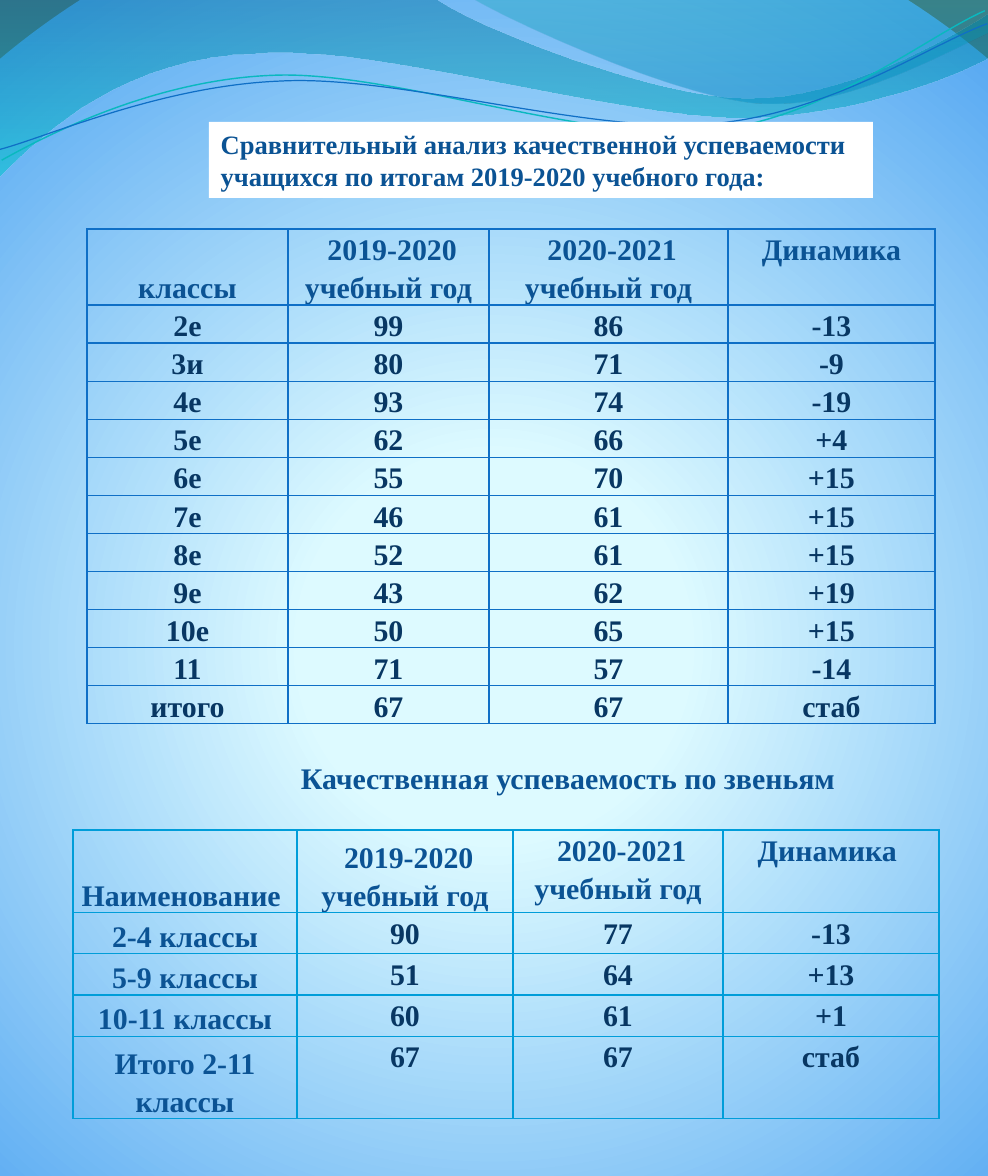
from dataclasses import dataclass

from pptx import Presentation
from pptx.dml.color import RGBColor
from pptx.enum.shapes import MSO_SHAPE
from pptx.enum.text import MSO_ANCHOR, MSO_AUTO_SIZE, PP_ALIGN
from pptx.oxml import parse_xml
from pptx.oxml.ns import nsdecls, qn
from pptx.util import Pt

RECT = MSO_SHAPE.RECTANGLE
TOP, MIDDLE, BOTTOM = MSO_ANCHOR.TOP, MSO_ANCHOR.MIDDLE, MSO_ANCHOR.BOTTOM
LEFT, CENTER = PP_ALIGN.LEFT, PP_ALIGN.CENTER
GROW = MSO_AUTO_SIZE.SHAPE_TO_FIT_TEXT

PX = 7652


@dataclass(frozen=True)
class Theme:
    font: str = "Times New Roman"
    title_size: int = 16
    body_size: int = 18
    blue: str = "0B5394"
    navy: str = "083763"
    white: str = "FFFFFF"
    class_grid: str = "0F6FC6"
    level_grid: str = "009DD9"
    teal_line: str = "0AB8BF"
    blue_line: str = "0F6FC6"
    backdrop: tuple = ((25, "DDFAFF", 100), (100, "59AAF2", 100), (100, "52767C", 100))
    wide_wave: tuple = ((0, "0074A1", 45), (100, "00C6CF", 55))
    right_wave: tuple = ((0, "00A1A9", 30), (80, "008BBF", 45))


THEME = Theme()
DOWN = '<a:lin ang="5400000" scaled="0"/>'
RADIAL = ('<a:path path="circle"><a:fillToRect l="10000" t="110000" '
          'r="10000" b="100000"/></a:path>')
LINE_TILT = -2.7

WIDE_WAVE = [[(0, -1)], [(435, -1)], [(470, 26), (656, 99), (749, 99)],
             [(842, 99), (946, 41), (988, 14)], [(989, 57)],
             [(972, 69), (859, 118), (737, 118)], [(614, 118), (378, 44), (255, 54)],
             [(128, 56), (45, 130), (-1, 177)], [(0, -1)]]
RIGHT_WAVE = [[(473, -1)], [(503, 18), (674, 97), (760, 103)],
              [(845, 109), (950, 50), (988, 33)], [(988, 0)], [(473, -1)]]
TEAL_CURVE = [[(-1, 137)], [(47, 113), (156, 64), (273, 65)],
              [(390, 65), (585, 147), (703, 141)], [(821, 137), (928, 57), (988, 34)]]
BLUE_CURVE = [[(-2, 126)], [(45, 116), (162, 70), (281, 71)],
              [(399, 70), (590, 139), (707, 134)], [(826, 131), (932, 65), (990, 47)]]

YEARS = [" 2019-2020 учебный год", " 2020-2021 учебный год"]
CLASS_ROWS = [
    ["классы", *YEARS, "Динамика"],
    ["2е", "99", "86", "-13"],
    ["3и", "80", "71", "-9"],
    ["4е", "93", "74", "-19"],
    ["5е", "62", "66", "+4"],
    ["6е", "55", "70", "+15"],
    ["7е", "46", "61", "+15"],
    ["8е", "52", "61", "+15"],
    ["9е", "43", "62", "+19"],
    ["10е", "50", "65", "+15"],
    ["11", "71", "57", "-14"],
    ["итого", "67", "67", "стаб"],
]
LEVEL_ROWS = [
    ["Наименование ", *YEARS, "Динамика "],
    ["2-4 классы", "90", "77", "-13"],
    ["5-9 классы", "51", "64", "+13"],
    ["10-11 классы", "60", "61", "+1"],
    ["Итого 2-11 классы", "67", "67", "стаб"],
]
TITLE = ["Сравнительный анализ качественной успеваемости",
         "учащихся по итогам 2019-2020 учебного года:"]
CAPTION = ["Качественная успеваемость по звеньям"]


def px(*lengths):
    return [round(length * PX) for length in lengths]


def set_format(target, formats):
    for name, value in formats.items():
        setattr(target, name, value)


def set_gradient(fill, holder, stops, direction):
    fill.background()
    gs = "".join(f'<a:gs pos="{pos * 1000}"><a:srgbClr val="{color}">'
                 f'<a:alpha val="{alpha * 1000}"/></a:srgbClr></a:gs>'
                 for pos, color, alpha in stops)
    empty = holder.find(".//" + qn("a:noFill"))
    empty.getparent().replace(empty, parse_xml(
        f'<a:gradFill {nsdecls("a")} rotWithShape="1"><a:gsLst>{gs}</a:gsLst>'
        f'{direction}</a:gradFill>'))


def write(p, text, size, color):
    r = p.add_run()
    r.text = text
    set_format(r.font, {"name": THEME.font, "size": Pt(size), "bold": True})
    r.font.color.rgb = RGBColor.from_string(color)


def add_curve(s, box, segments, close):
    points = [px(box[0] + x, box[1] + y) for segment in segments for x, y in segment]
    builder = s.shapes.build_freeform(*points[0])
    builder.add_line_segments(points[1:], close=close)
    sp = builder.convert_to_shape()
    sp.shadow.inherit = False
    straight = iter(sp.element.findall(".//" + qn("a:lnTo")))
    for segment in segments[1:]:
        steps = [next(straight) for _ in segment]
        if len(steps) == 3:
            bend = parse_xml(f'<a:cubicBezTo {nsdecls("a")}/>')
            steps[0].addprevious(bend)
            for step in steps:
                bend.append(step[0])
                step.getparent().remove(step)
    return sp


def add_waves(s, box):
    for segments, stops in ((WIDE_WAVE, THEME.wide_wave), (RIGHT_WAVE, THEME.right_wave)):
        sp = add_curve(s, box, segments, True)
        set_gradient(sp.fill, sp.element.spPr, stops, DOWN)
        sp.line.fill.background()
    for segments, color, width in ((TEAL_CURVE, THEME.teal_line, 0.85),
                                   (BLUE_CURVE, THEME.blue_line, 0.75)):
        sp = add_curve(s, box, segments, False)
        sp.rotation = LINE_TILT
        sp.fill.background()
        sp.line.color.rgb = RGBColor.from_string(color)
        sp.line.width = Pt(width)


def add_label(s, box, lines, size, fill=None):
    if fill:
        sp = s.shapes.add_shape(RECT, *px(*box))
        sp.shadow.inherit = False
        sp.fill.solid()
        sp.fill.fore_color.rgb = RGBColor.from_string(fill)
        sp.line.fill.background()
    else:
        sp = s.shapes.add_textbox(*px(*box))
    tf = sp.text_frame
    set_format(tf, {"word_wrap": False, "auto_size": GROW,
                    "vertical_anchor": MIDDLE if fill else TOP})
    for i, line in enumerate(lines):
        p = tf.add_paragraph() if i else tf.paragraphs[0]
        p.alignment = LEFT
        write(p, line, size, THEME.blue)


def add_borders(cell, color):
    tcPr = cell._tc.get_or_add_tcPr()
    for i, side in enumerate("LRTB"):
        tcPr.insert(i, parse_xml(
            f'<a:ln{side} {nsdecls("a")} w="12700"><a:solidFill>'
            f'<a:srgbClr val="{color}"/></a:solidFill></a:ln{side}>'))


def add_grades(s, box, rows, widths, heights, grid, name_color):
    frame = s.shapes.add_table(len(rows), len(widths), *px(*box))
    table = frame.table
    set_format(table, {"first_row": False, "horz_banding": False})
    for column, width in zip(table.columns, px(*widths)):
        column.width = width
    for row, height in zip(table.rows, px(*heights)):
        row.height = height
    frame.height = px(box[3])[0]
    side = px(8)[0]
    for i, values in enumerate(rows):
        for j, value in enumerate(values):
            cell = table.cell(i, j)
            low = j == 0 or (i == 0 and j == 1)
            set_format(cell, {"margin_left": side, "margin_right": side,
                              "margin_top": 0, "margin_bottom": 0,
                              "vertical_anchor": BOTTOM if low else TOP})
            cell.fill.background()
            add_borders(cell, grid)
            p = cell.text_frame.paragraphs[0]
            set_format(p, {"alignment": CENTER, "line_spacing": 1.15})
            color = THEME.blue if i == 0 else name_color if j == 0 else THEME.navy
            write(p, value, THEME.body_size, color)


def main():
    prs = Presentation()
    prs.slide_width, prs.slide_height = px(988, 1176)
    s = prs.slides.add_slide(prs.slide_layouts[6])
    set_gradient(s.background.fill, s.element, THEME.backdrop, RADIAL)
    add_waves(s, (0, 0))
    add_grades(s, (87, 229, 848, 537), CLASS_ROWS, [201, 201, 239, 207],
               [61] + [30] * 11, THEME.class_grid, THEME.navy)
    add_label(s, (209, 122, 664, 76), TITLE, THEME.title_size, THEME.white)
    add_grades(s, (73, 830, 866, 289), LEVEL_ROWS, [224, 216, 210, 216],
               [38] * 5, THEME.level_grid, THEME.blue)
    add_label(s, (289, 754, 571, 48), CAPTION, THEME.body_size)
    prs.save("out.pptx")


if __name__ == "__main__":
    main()
